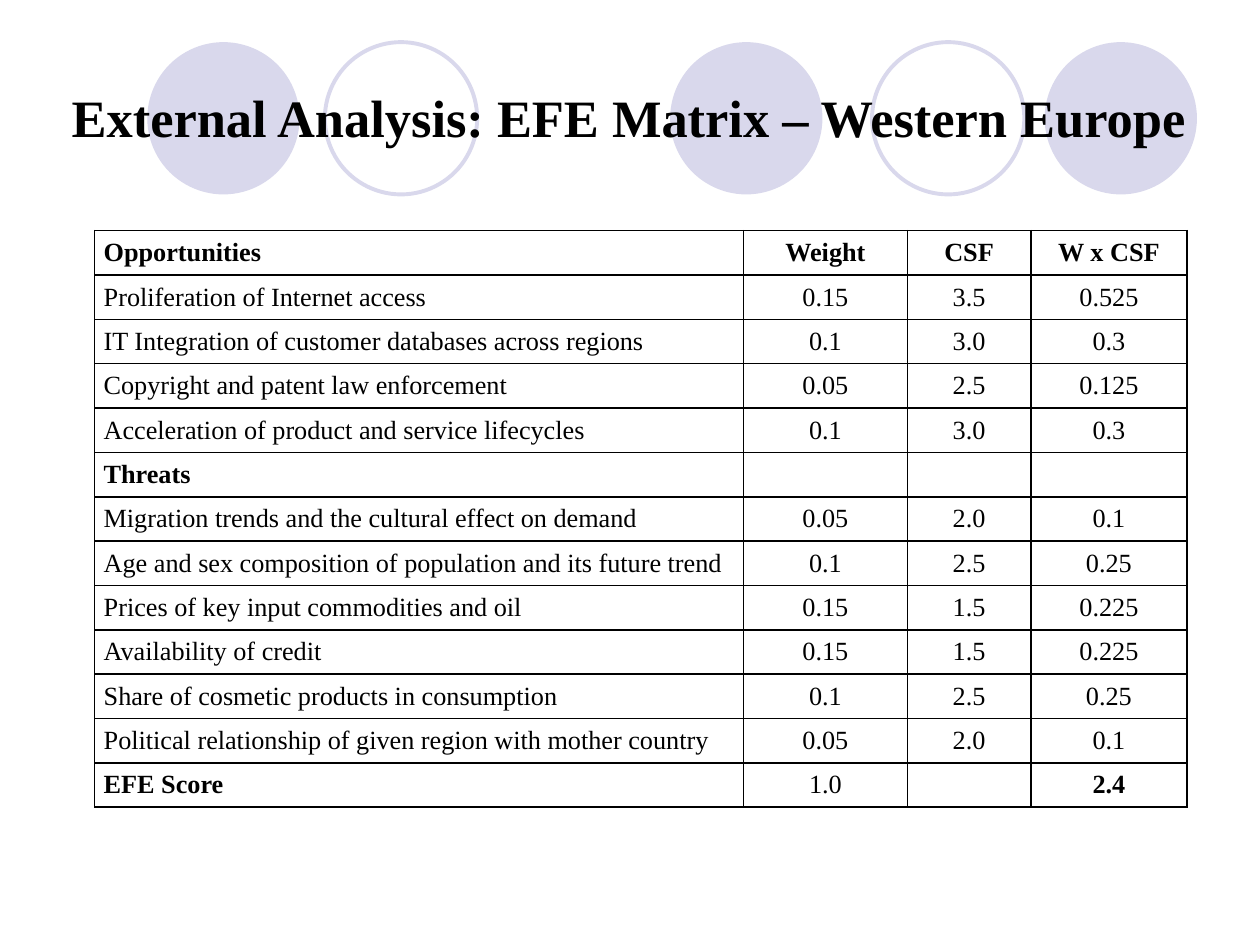
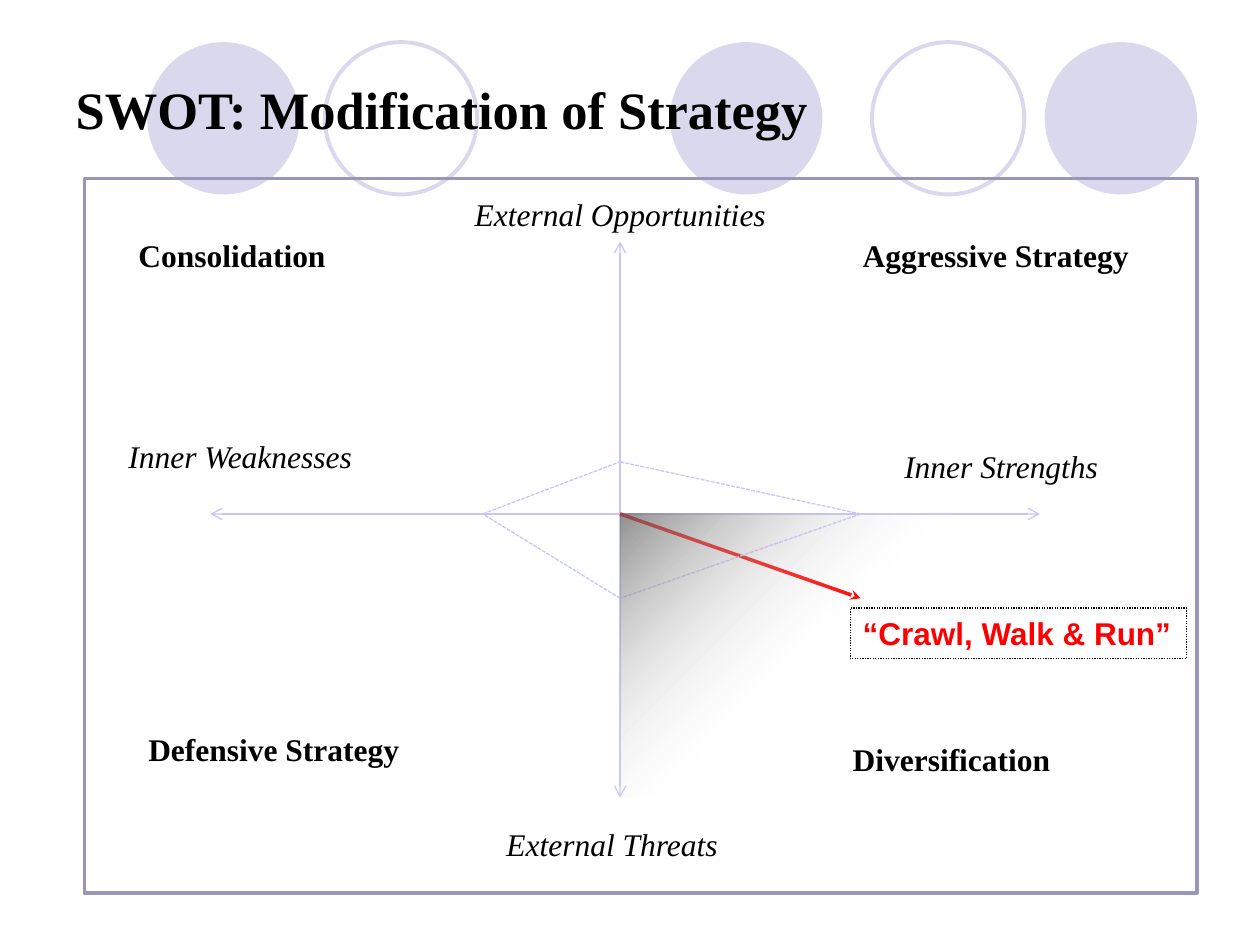
from lxml import etree
from pptx import Presentation
from pptx.dml.color import RGBColor
from pptx.enum import dml, shapes, text
from pptx.oxml import ns
from pptx.util import Cm, Pt


class Theme:
    """Colours, fonts and sizes shared by both slides."""
    ink = RGBColor(0x00, 0x00, 0x00)
    band = RGBColor(0xD9, 0xD8, 0xEC)
    axis = RGBColor(0xC6, 0xC6, 0xFB)
    frame = RGBColor(0x97, 0x97, 0xBD)
    accent = RGBColor(0xFF, 0x00, 0x00)
    shade = RGBColor(0x66, 0x66, 0x66)
    paper = RGBColor(0xFF, 0xFF, 0xFF)
    serif, sans = "Times New Roman", "Arial"
    title_size, label_size, cell_size = Pt(30), Pt(18), Pt(15)


MATRIX = [
    ("Opportunities", "Weight", "CSF", "W x CSF"),
    ("Proliferation of Internet access", "0.15", "3.5", "0.525"),
    ("IT Integration of customer databases across regions", "0.1", "3.0", "0.3"),
    ("Copyright and patent law enforcement", "0.05", "2.5", "0.125"),
    ("Acceleration of product and service lifecycles", "0.1", "3.0", "0.3"),
    ("Threats", "", "", ""),
    ("Migration trends and the cultural effect on demand", "0.05", "2.0", "0.1"),
    ("Age and sex composition of population and its future trend", "0.1", "2.5", "0.25"),
    ("Prices of key input commodities and oil", "0.15", "1.5", "0.225"),
    ("Availability of credit", "0.15", "1.5", "0.225"),
    ("Share of cosmetic products in consumption", "0.1", "2.5", "0.25"),
    ("Political relationship of given region with mother country", "0.05", "2.0", "0.1"),
    ("EFE Score", "1.0", "", "2.4"),
]
BOLD_CELLS = {(0, c) for c in range(4)} | {(5, 0), (12, 0), (12, 3)}

# Labels of the SWOT map: text, left, top, width (cm, from the frame's corner)
STRATEGIES = [
    ("Diversification", 15.24, 11.2, 5.08),
    ("Defensive Strategy", 1.04, 11, 5.72),
    ("Consolidation", 0.84, 1.04, 5.08),
    ("Aggressive Strategy", 15.44, 1.04, 6.35),
]
FACTORS = [
    ("External Threats", 8.26, 12.9, 6.35),
    ("External Opportunities", 7.62, 0.2, 6.55),
    ("Inner Weaknesses", 0.64, 5.08, 6.35),
    ("Inner Strengths", 16.28, 5.28, 6.35),
]


# Shared helpers
def set_font(p, size, bold=False, italic=False, color=Theme.ink, name=Theme.serif):
    f = p.font
    f.name, f.size, f.bold, f.italic = name, size, bold, italic
    f.color.rgb = color


def add_shape(slide, kind, box, fill=None, line=None, width=0.75):
    sp = slide.shapes.add_shape(kind, *map(Cm, box))
    sp.shadow.inherit = False
    if fill is None:
        sp.fill.background()
    else:
        sp.fill.solid()
        sp.fill.fore_color.rgb = fill
    if line is None:
        sp.line.fill.background()
    else:
        sp.line.color.rgb = line
        sp.line.width = Pt(width)
    return sp


def add_line(slide, start, end, color=Theme.axis, width=0.75, dash=None, **ends):
    """Draw a straight line; ends maps headEnd / tailEnd to an arrow type."""
    cn = slide.shapes.add_connector(
        shapes.MSO_CONNECTOR.STRAIGHT, *map(Cm, start + end))
    cn.line.color.rgb = color
    cn.line.width = Pt(width)
    if dash:
        cn.line.dash_style = dash
    ln = cn.line._get_or_add_ln()
    for tag, arrow in ends.items():
        etree.SubElement(ln, ns.qn("a:" + tag), type=arrow)
    etree.SubElement(cn._element.spPr, ns.qn("a:effectLst"))


def write_label(sp, words, **font):
    tf = sp.text_frame
    tf.word_wrap = True
    tf.auto_size = text.MSO_AUTO_SIZE.SHAPE_TO_FIT_TEXT
    tf.vertical_anchor = text.MSO_ANCHOR.TOP
    p = tf.paragraphs[0]
    p.text = words
    p.alignment = text.PP_ALIGN.LEFT
    set_font(p, Theme.label_size, **font)


def add_circle_band(slide, layout):
    """Put the row of circles on the layout, behind its placeholders."""
    circles = [(13.51, True), (21.06, True), (2.97, True), (17.58, False), (6.55, False)]
    for i, (left, solid) in enumerate(circles):
        style = {"fill": Theme.band} if solid else {"line": Theme.band, "width": 2.25}
        sp = add_shape(slide, shapes.MSO_SHAPE.OVAL, (left, 0.85, 3.07, 3.07), **style)
        layout.shapes._spTree.insert(2 + i, sp._element)


def set_title(slide, words, box):
    title = slide.shapes.title
    title.left, title.top, title.width, title.height = map(Cm, box)
    tf = title.text_frame
    tf.vertical_anchor = text.MSO_ANCHOR.MIDDLE
    p = tf.paragraphs[0]
    p.text = words
    p.alignment = text.PP_ALIGN.LEFT
    set_font(p, Theme.title_size, bold=True)


# EFE matrix
def set_borders(cell):
    tc_pr = cell._tc.get_or_add_tcPr()
    for side in ("lnL", "lnR", "lnT", "lnB"):
        ln = etree.SubElement(tc_pr, ns.qn("a:" + side), w=str(Pt(1)))
        fill = etree.SubElement(ln, ns.qn("a:solidFill"))
        etree.SubElement(fill, ns.qn("a:srgbClr"), val=str(Theme.ink))


def add_matrix(slide, box):
    table = slide.shapes.add_table(len(MATRIX), 4, *map(Cm, box)).table
    for column, width in zip(table.columns, (13.08, 3.3, 2.49, 3.15)):
        column.width = Cm(width)
    for r, values in enumerate(MATRIX):
        table.rows[r].height = Cm(box[3] / len(MATRIX))
        for c, value in enumerate(values):
            cell = table.cell(r, c)
            set_borders(cell)
            cell.fill.background()
            cell.margin_left = cell.margin_right = Cm(0.18)
            cell.margin_top = cell.margin_bottom = 0
            cell.vertical_anchor = text.MSO_ANCHOR.MIDDLE
            p = cell.text_frame.paragraphs[0]
            p.text = value
            p.alignment = text.PP_ALIGN.CENTER if c else text.PP_ALIGN.LEFT
            set_font(p, Theme.cell_size, bold=(r, c) in BOLD_CELLS)


# SWOT map
def add_shaded_quadrant(slide, box):
    sp = add_shape(slide, shapes.MSO_SHAPE.RECTANGLE, box)
    sp.fill.gradient()
    sp.fill.gradient_angle = 315
    stops = [(0, Theme.shade, 72), (0.55, Theme.paper, 0)]
    for stop, (position, color, opacity) in zip(sp.fill.gradient_stops, stops):
        stop.position = position
        stop.color.rgb = color
        clr = stop._gs.find(ns.qn("a:srgbClr"))
        etree.SubElement(clr, ns.qn("a:alpha"), val=str(opacity * 1000))


def add_swot_map(slide, box):
    left, top = box[:2]
    cx, cy = left + 10.8, top + 6.76

    def from_centre(dx, dy):
        return cx + dx, cy + dy

    # Axes and the chosen direction
    both = {"headEnd": "arrow", "tailEnd": "arrow"}
    add_line(slide, from_centre(0, -5.49), from_centre(0, 5.72), **both)
    add_line(slide, from_centre(-8.26, 0), from_centre(8.46, 0), **both)
    add_line(slide, (cx, cy), from_centre(4.85, 1.7), Theme.accent, 2, tailEnd="stealth")

    # Strategies and factors
    for labels, style in ((STRATEGIES, {"bold": True}), (FACTORS, {"italic": True})):
        for words, dx, dy, width in labels:
            tb = slide.shapes.add_textbox(
                Cm(left + dx), Cm(top + dy), Cm(width), Cm(1.02))
            write_label(tb, words, **style)

    # Callout
    callout = add_shape(slide, shapes.MSO_SHAPE.RECTANGLE,
                        (left + 15.44, top + 8.66, 6.78, 1.02), line=Theme.ink)
    callout.line.dash_style = dml.MSO_LINE.ROUND_DOT
    write_label(callout, "“Crawl, Walk & Run”", bold=True,
                color=Theme.accent, name=Theme.sans)

    # Dashed diamond of scores
    corners = [from_centre(*d) for d in ((-2.77, 0), (0, -1.05), (4.85, 0), (0, 1.7))]
    for start, end in zip(corners, corners[1:] + corners[:1]):
        add_line(slide, start, end, dash=dml.MSO_LINE.SQUARE_DOT)

    add_shaded_quadrant(slide, (cx, cy, 6.78, 5.72))
    add_shape(slide, shapes.MSO_SHAPE.RECTANGLE, box, line=Theme.frame, width=2)


def main():
    prs = Presentation()
    prs.slide_width, prs.slide_height = Cm(25.4), Cm(19.05)
    layout = prs.slide_layouts[5]

    efe = prs.slides.add_slide(layout)
    add_circle_band(efe, layout)
    set_title(efe, "External Analysis: EFE Matrix – Western Europe", (1.19, 0.76, 23.22, 3.18))
    add_matrix(efe, (1.91, 4.65, 22.02, 11.63))

    swot = prs.slides.add_slide(layout)
    set_title(swot, "SWOT: Modification of Strategy", (1.27, 0.76, 22.86, 2.84))
    add_swot_map(swot, (1.7, 3.6, 22.43, 14.4))

    prs.save("out.pptx")


if __name__ == "__main__":
    main()
